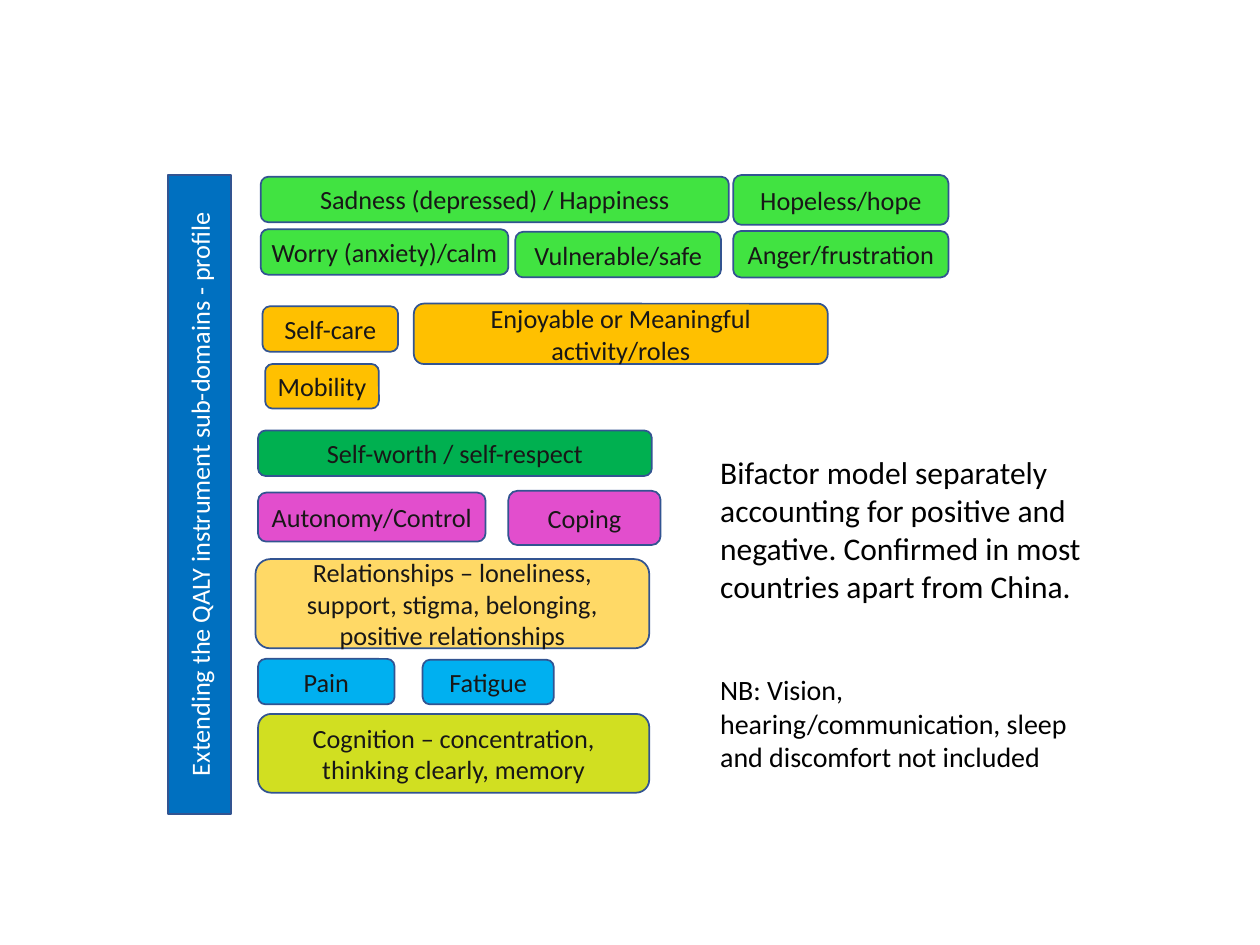
from pptx import Presentation
from pptx import util as u
from pptx.dml import color
from pptx.enum import shapes, text

Pt = u.Pt


def rgb(value):
    return color.RGBColor.from_string(value)


def add_block(page, kind, bounds, words, fill, ink):
    """Add an outlined shape with centred 15 pt text; bounds are in points."""
    block = page.shapes.add_shape(kind, *[Pt(length) for length in bounds])
    block.shadow.inherit = False
    block.fill.solid()
    block.fill.fore_color.rgb = rgb(fill)
    block.line.color.rgb = rgb("325491")
    block.line.width = Pt(1)
    frame = block.text_frame
    frame.word_wrap = True
    frame.vertical_anchor = text.MSO_ANCHOR.MIDDLE
    frame.margin_left = frame.margin_right = Pt(4)
    frame.margin_top = frame.margin_bottom = Pt(2)
    para = frame.paragraphs[0]
    para.alignment = text.PP_ALIGN.CENTER
    span = para.add_run()
    span.text = words
    span.font.name = "Calibri"
    span.font.size = Pt(15)
    span.font.color.rgb = rgb(ink)
    return block


deck = Presentation()
deck.slide_width, deck.slide_height = Pt(720), Pt(540)
page = deck.slides.add_slide(deck.slide_layouts[6])

# Vertical title bar
bar = add_block(page, shapes.MSO_SHAPE.RECTANGLE, (96, 100, 36, 365),
                "Extending the QALY instrument sub-domains - profile",
                "0070C0", "FFFFFF")
bar.element.txBody.bodyPr.set("vert", "vert270")

# Sub-domains, grouped by fill: left, top, width, height, wording
domains = {
    "41E341": [
        (149, 101, 267.5, 26, "Sadness (depressed) / Happiness"),
        (419, 100, 123, 28.5, "Hopeless/hope"),
        (149, 131, 141.5, 26, "Worry (anxiety)/calm"),
        (294.5, 132.5, 117.5, 26, "Vulnerable/safe"),
        (419, 132, 123, 26.5, "Anger/frustration"),
    ],
    "FFC000": [
        (150, 175, 77.5, 26, "Self-care"),
        (236.5, 173.5, 236.5, 34.5, "Enjoyable or Meaningful activity/roles"),
        (151.5, 208, 65, 25.5, "Mobility"),
    ],
    "00B050": [(147.5, 246, 225, 26, "Self-worth / self-respect")],
    "E24ECD": [
        (147.5, 281.5, 130, 28, "Autonomy/Control"),
        (290.5, 280.5, 87, 31, "Coping"),
    ],
    "FFD966": [
        (146, 319.5, 225, 51,
         "Relationships – loneliness, support, stigma, belonging, "
         "positive relationships"),
    ],
    "00B0F0": [
        (147.5, 376.5, 78, 26, "Pain"),
        (241.5, 377, 75, 25.5, "Fatigue"),
    ],
    "D1DF21": [
        (147.5, 408, 223.5, 45,
         "Cognition – concentration, thinking clearly, memory"),
    ],
}
for fill, blocks in domains.items():
    for *bounds, words in blocks:
        add_block(page, shapes.MSO_SHAPE.ROUNDED_RECTANGLE, bounds, words,
                  fill, "181717")

# Comments at the right
comments = [
    ("Bifactor model separately accounting for positive and negative. "
     "Confirmed in most countries apart from China.", 18, 0),
    ("NB: Vision, hearing/communication, sleep and discomfort not included",
     16, 39),
]
box = page.shapes.add_textbox(Pt(404.5), Pt(255.5), Pt(221), Pt(213))
frame = box.text_frame
frame.word_wrap = True
for index, (words, size, gap) in enumerate(comments):
    para = frame.add_paragraph() if index else frame.paragraphs[0]
    para.space_before = Pt(gap)
    span = para.add_run()
    span.text = words
    span.font.name = "Calibri"
    span.font.size = Pt(size)
    span.font.color.rgb = rgb("000000")

deck.save("out.pptx")
